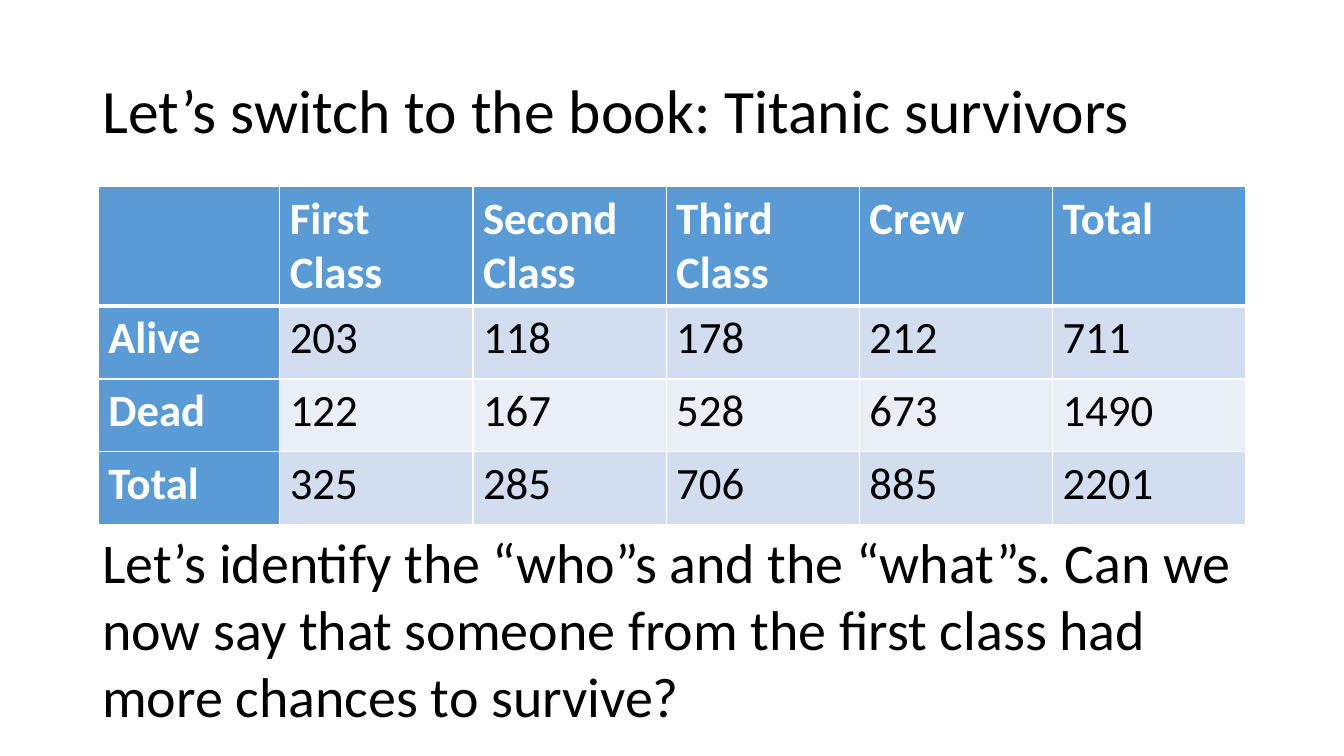
from lxml.etree import SubElement
from pptx import Presentation
from pptx.dml.color import RGBColor
from pptx.enum.text import MSO_ANCHOR as Anchor, MSO_AUTO_SIZE as AutoSize
from pptx.oxml.ns import qn
from pptx.util import Pt

FONT = "Calibri"
COLORS = {
    "text": "000000",
    "header": "5B9BD5",
    "header_text": "FFFFFF",
    "rule": "FFFFFF",
    "odd_row": "D2DEEF",
    "even_row": "EAEFF7",
}
SURVIVORS = [
    ["", "First Class", "Second Class", "Third Class", "Crew", "Total"],
    ["Alive", "203", "118", "178", "212", "711"],
    ["Dead", "122", "167", "528", "673", "1490"],
    ["Total", "325", "285", "706", "885", "2201"],
]


def color(name):
    return RGBColor.from_string(COLORS[name])


def style(paragraph, size, color_name, bold=False):
    font = paragraph.font
    font.name, font.size, font.bold = FONT, Pt(size), bold
    font.color.rgb = color(color_name)


def add_text(slide, box, text, size, anchor=Anchor.TOP, auto_size=AutoSize.NONE, spacing=1.0):
    frame = slide.shapes.add_textbox(*map(Pt, box)).text_frame
    frame.word_wrap = True
    frame.auto_size = auto_size
    frame.vertical_anchor = anchor
    paragraph = frame.paragraphs[0]
    paragraph.text = text
    paragraph.line_spacing = spacing
    style(paragraph, size, "text")


def add_rules(cell, widths):
    """Draw the cell borders; widths maps a side (L, R, T, B) to points."""
    properties = cell._tc.get_or_add_tcPr()
    for side, width in widths.items():
        line = SubElement(properties, qn(f"a:ln{side}"), w=str(Pt(width)))
        fill = SubElement(line, qn("a:solidFill"))
        SubElement(fill, qn("a:srgbClr"), val=COLORS["rule"])


def add_survivor_table(slide, box, label_width, header_height):
    left, top, width, height = box
    row_count, column_count = len(SURVIVORS), len(SURVIVORS[0])
    table = slide.shapes.add_table(row_count, column_count, *map(Pt, box)).table
    table.first_col = True

    # Label column and header row first, the rest shared equally
    for index, column in enumerate(table.columns):
        column.width = Pt((width - label_width) / (column_count - 1) if index else label_width)
    for index, row in enumerate(table.rows):
        row.height = Pt((height - header_height) / (row_count - 1) if index else header_height)

    for r, values in enumerate(SURVIVORS):
        band = "odd_row" if r % 2 else "even_row"
        for c, value in enumerate(values):
            cell = table.cell(r, c)
            is_header = r == 0 or c == 0
            cell.text = value
            style(cell.text_frame.paragraphs[0], 32,
                  "header_text" if is_header else "text", is_header)
            # Borders precede the fill in the cell properties
            add_rules(cell, {"L": 1, "R": 1, "T": 3 if r == 1 else 1, "B": 3 if r == 0 else 1})
            cell.fill.solid()
            cell.fill.fore_color.rgb = color("header" if is_header else band)


def build_survivors_slide(presentation):
    slide = presentation.slides.add_slide(presentation.slide_layouts[6])
    left, width = 66, 828

    # Title
    add_text(slide, (left, 29, width, 104.4), "Let’s switch to the book: Titanic survivors",
             44, anchor=Anchor.MIDDLE, spacing=0.9)

    # Survivors by class
    add_survivor_table(slide, (left + 4.2, 133.2, 819.6, 241.4),
                       label_width=129.6, header_height=85.4)

    # Question
    add_text(slide, (left, 373, width, 152.6),
             "Let’s identify the “who”s and the “what”s. Can we now say that someone "
             "from the first class had more chances to survive?",
             40, auto_size=AutoSize.SHAPE_TO_FIT_TEXT)


def main():
    presentation = Presentation()
    presentation.slide_width, presentation.slide_height = Pt(960), Pt(540)
    build_survivors_slide(presentation)
    presentation.save("out.pptx")


if __name__ == "__main__":
    main()
